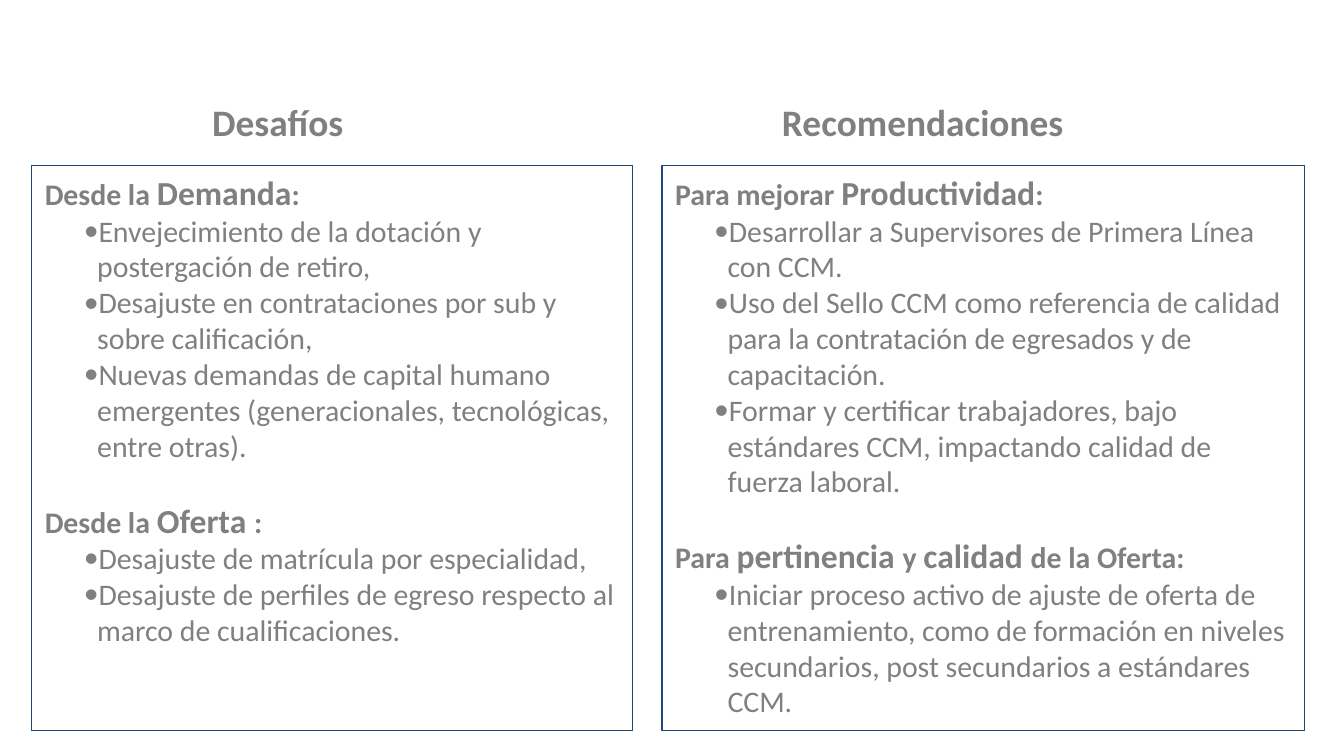
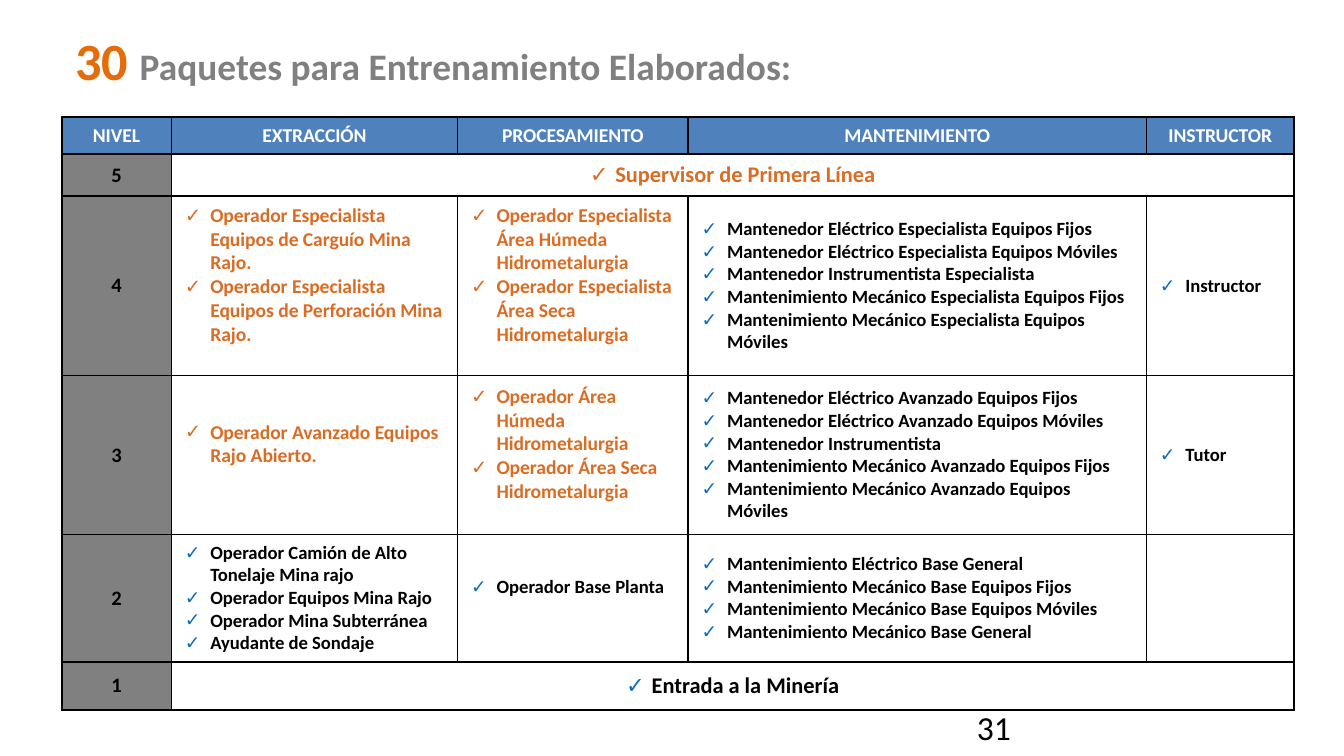
from pptx import Presentation
from pptx.dml.color import RGBColor
from pptx.enum.shapes import MSO_SHAPE
from pptx.enum.text import MSO_ANCHOR, PP_ALIGN
from pptx.oxml.ns import qn
from pptx.util import Inches, Pt
from lxml import etree

RECTANGLE = MSO_SHAPE.RECTANGLE
TOP, MIDDLE = MSO_ANCHOR.TOP, MSO_ANCHOR.MIDDLE
LEFT, CENTER = PP_ALIGN.LEFT, PP_ALIGN.CENTER

FONT = "Calibri"
GRAY = RGBColor(0x80, 0x80, 0x80)
BLACK = RGBColor(0x00, 0x00, 0x00)
WHITE = RGBColor(0xFF, 0xFF, 0xFF)
NAVY = RGBColor(0x1F, 0x49, 0x7D)
HEADER_BLUE = RGBColor(0x4F, 0x81, 0xBD)
CHECK_BLUE = RGBColor(0x0D, 0x6C, 0xBC)
TITLE_ORANGE = RGBColor(0xE4, 0x6C, 0x0A)
NEW_ORANGE = RGBColor(0xDA, 0x6C, 0x24)

# Text indent and hanging indent of each bullet, in inches
BULLET_INDENTS = {"•": (0.39, -0.1), "✓": (0.19, -0.19)}

prs = Presentation()
prs.slide_width = Inches(10)
prs.slide_height = prs.slide_width * 9 // 16
COL, ROW = prs.slide_width / 100, prs.slide_height / 100
BLANK = prs.slide_layouts[6]


def place(left, top, width, height):
    """Turn hundredths of the slide's width and height into lengths."""
    return [round(share * unit) for share, unit in
            ((left, COL), (top, ROW), (width, COL), (height, ROW))]


def write(paragraph, runs, bullet=None, bullet_color=None, align=LEFT):
    """Fill a paragraph with (text, size, bold, colour) runs."""
    paragraph.alignment = align
    if bullet:
        properties = paragraph._p.get_or_add_pPr()
        for key, inches in zip(("marL", "indent"), BULLET_INDENTS[bullet]):
            properties.set(key, str(Inches(inches)))
        if bullet_color is not None:
            color = etree.SubElement(properties, qn("a:buClr"))
            etree.SubElement(color, qn("a:srgbClr"), val=str(bullet_color))
        etree.SubElement(properties, qn("a:buFont"), typeface=FONT)
        etree.SubElement(properties, qn("a:buChar"), char=bullet)
    for text, size, bold, color in runs:
        run = paragraph.add_run()
        run.text = text
        for key, value in {"name": FONT, "size": Pt(size), "bold": bold}.items():
            setattr(run.font, key, value)
        run.font.color.rgb = color


# Slide 1: challenges and recommendations
challenges = [
    ([("Desde la ", 16), ("Demanda", 18), (":", 16)],
     ["Envejecimiento de la dotación y postergación de retiro,",
      "Desajuste en contrataciones por sub y sobre calificación,",
      "Nuevas demandas de capital humano emergentes (generacionales, "
      "tecnológicas, entre otras)."]),
    ([("Desde la ", 16), ("Oferta ", 18), (":", 16)],
     ["Desajuste de matrícula por especialidad,",
      "Desajuste de perfiles de egreso respecto al marco de cualificaciones."]),
]
recommendations = [
    ([("Para mejorar ", 16), ("Productividad", 18), (":", 16)],
     ["Desarrollar a Supervisores de Primera Línea con CCM.",
      "Uso del Sello CCM como referencia de calidad para la contratación de "
      "egresados y de capacitación.",
      "Formar y certificar trabajadores, bajo estándares CCM, impactando "
      "calidad de fuerza laboral."]),
    ([("Para ", 16), ("pertinencia ", 18), ("y ", 16), ("calidad ", 18),
      ("de la Oferta:", 16)],
     ["Iniciar proceso activo de ajuste de oferta de entrenamiento, como de "
      "formación en niveles secundarios, post secundarios a estándares CCM."]),
]
panels = [
    ("Desafíos", 14.8, 2.35, 44.7, challenges),
    ("Recomendaciones", 57.2, 49.25, 47.8, recommendations),
]

slide = prs.slides.add_slide(BLANK)
for heading, heading_left, panel_left, panel_width, topics in panels:
    panel = slide.shapes.add_shape(RECTANGLE, *place(panel_left, 21.87, panel_width, 74.8))
    panel.shadow.inherit = False
    panel.fill.background()
    panel.line.color.rgb = NAVY
    panel.line.width = Pt(0.75)
    frame = panel.text_frame
    frame.word_wrap = True
    frame.vertical_anchor = TOP
    for number, (topic, points) in enumerate(topics):
        paragraph = frame.add_paragraph() if number else frame.paragraphs[0]
        write(paragraph, [(text, size, True, GRAY) for text, size in topic])
        if number:
            paragraph.space_before = Pt(19.5)
        for point in points:
            paragraph = frame.add_paragraph()
            paragraph.level = 1
            write(paragraph, [(point, 16, False, GRAY)], "•")

    heading_frame = slide.shapes.add_textbox(*place(heading_left, 12.3, 23.3, 7.8)).text_frame
    heading_frame.word_wrap = True
    write(heading_frame.paragraphs[0], [(heading, 20, True, GRAY)])

# Slide 2: training packages by level and area
areas = ["NIVEL", "EXTRACCIÓN", "PROCESAMIENTO", "MANTENIMIENTO", "INSTRUCTOR"]
area_widths = [8.15, 21.3, 17.15, 34.1, 11]
level_heights = [4.7, 5.55, 23.75, 21, 16.85, 6.4]
levels = {
    "5": [["Supervisor de Primera Línea"]],
    "4": [
        ["Operador Especialista Equipos de Carguío Mina Rajo.",
         "Operador Especialista Equipos de Perforación Mina Rajo."],
        ["Operador Especialista Área Húmeda Hidrometalurgia",
         "Operador Especialista Área Seca Hidrometalurgia"],
        ["Mantenedor Eléctrico Especialista Equipos Fijos",
         "Mantenedor Eléctrico Especialista Equipos Móviles",
         "Mantenedor Instrumentista Especialista",
         "Mantenimiento Mecánico Especialista Equipos Fijos",
         "Mantenimiento Mecánico Especialista Equipos Móviles"],
        ["Instructor"],
    ],
    "3": [
        ["Operador Avanzado Equipos Rajo Abierto."],
        ["Operador Área Húmeda Hidrometalurgia",
         "Operador Área Seca Hidrometalurgia"],
        ["Mantenedor Eléctrico Avanzado Equipos Fijos",
         "Mantenedor Eléctrico Avanzado Equipos Móviles",
         "Mantenedor Instrumentista",
         "Mantenimiento Mecánico Avanzado Equipos Fijos",
         "Mantenimiento Mecánico Avanzado Equipos Móviles"],
        ["Tutor"],
    ],
    "2": [
        ["Operador Camión de Alto Tonelaje Mina rajo",
         "Operador Equipos Mina Rajo",
         "Operador Mina Subterránea",
         "Ayudante de Sondaje"],
        ["Operador Base Planta"],
        ["Mantenimiento Eléctrico Base General",
         "Mantenimiento Mecánico Base Equipos Fijos",
         "Mantenimiento Mecánico Base Equipos Móviles",
         "Mantenimiento Mecánico Base General"],
        [],
    ],
    "1": [["Entrada a la Minería"]],
}
new_packages = {("5", 1), ("4", 1), ("4", 2), ("3", 1), ("3", 2)}
raised_groups = new_packages - {("5", 1)} | {("2", 2)}

slide = prs.slides.add_slide(BLANK)
title = slide.shapes.add_textbox(*place(4.6, 2.85, 63.8, 8.4)).text_frame
title.word_wrap = True
write(title.paragraphs[0], [
    ("30 ", 28, True, TITLE_ORANGE),
    ("Paquetes para Entrenamiento Elaborados:", 20, True, GRAY),
])

packages = slide.shapes.add_table(
    len(levels) + 1, len(areas),
    *place(4.6, 15.5, sum(area_widths), sum(level_heights))).table
packages.horz_banding = False
for column, width in zip(packages.columns, area_widths):
    column.width = round(width * COL)
for row, height in zip(packages.rows, level_heights):
    row.height = round(height * ROW)

for cell in packages.iter_cells():
    cell.vertical_anchor = MIDDLE
    for side in ("a:lnL", "a:lnR", "a:lnT", "a:lnB"):
        border = etree.SubElement(cell._tc.get_or_add_tcPr(), qn(side), w=str(Pt(1)))
        border_fill = etree.SubElement(border, qn("a:solidFill"))
        etree.SubElement(border_fill, qn("a:srgbClr"), val=str(BLACK))
    cell.fill.solid()
    cell.fill.fore_color.rgb = WHITE

for index, area in enumerate(areas):
    cell = packages.cell(0, index)
    cell.fill.fore_color.rgb = HEADER_BLUE
    write(cell.text_frame.paragraphs[0], [(area, 10.5, True, WHITE)], align=CENTER)

for row_index, (level, groups) in enumerate(levels.items(), 1):
    cell = packages.cell(row_index, 0)
    cell.fill.fore_color.rgb = GRAY
    write(cell.text_frame.paragraphs[0], [(level, 11, True, BLACK)], align=CENTER)
    shared = len(groups) == 1
    if shared:
        packages.cell(row_index, 1).merge(packages.cell(row_index, len(areas) - 1))
    for index, group in enumerate(groups, 1):
        cell = packages.cell(row_index, index)
        color, check_color, size = BLACK, CHECK_BLUE, 10
        if (level, index) in new_packages:
            color, check_color, size = NEW_ORANGE, None, 10.5
            cell.fill.background()
        if (level, index) in raised_groups:
            cell.margin_bottom = Inches(0.21)
        if shared:
            size = 12
        for number, package in enumerate(group):
            frame = cell.text_frame
            paragraph = frame.add_paragraph() if number else frame.paragraphs[0]
            write(paragraph, [(package, size, True, color)], "✓", check_color,
                  CENTER if shared else LEFT)

page_number = slide.shapes.add_textbox(*place(71.7, 92.6, 23.3, 5.3)).text_frame
page_number.word_wrap = True
write(page_number.paragraphs[0], [("31", 18, False, BLACK)])

prs.save("out.pptx")
